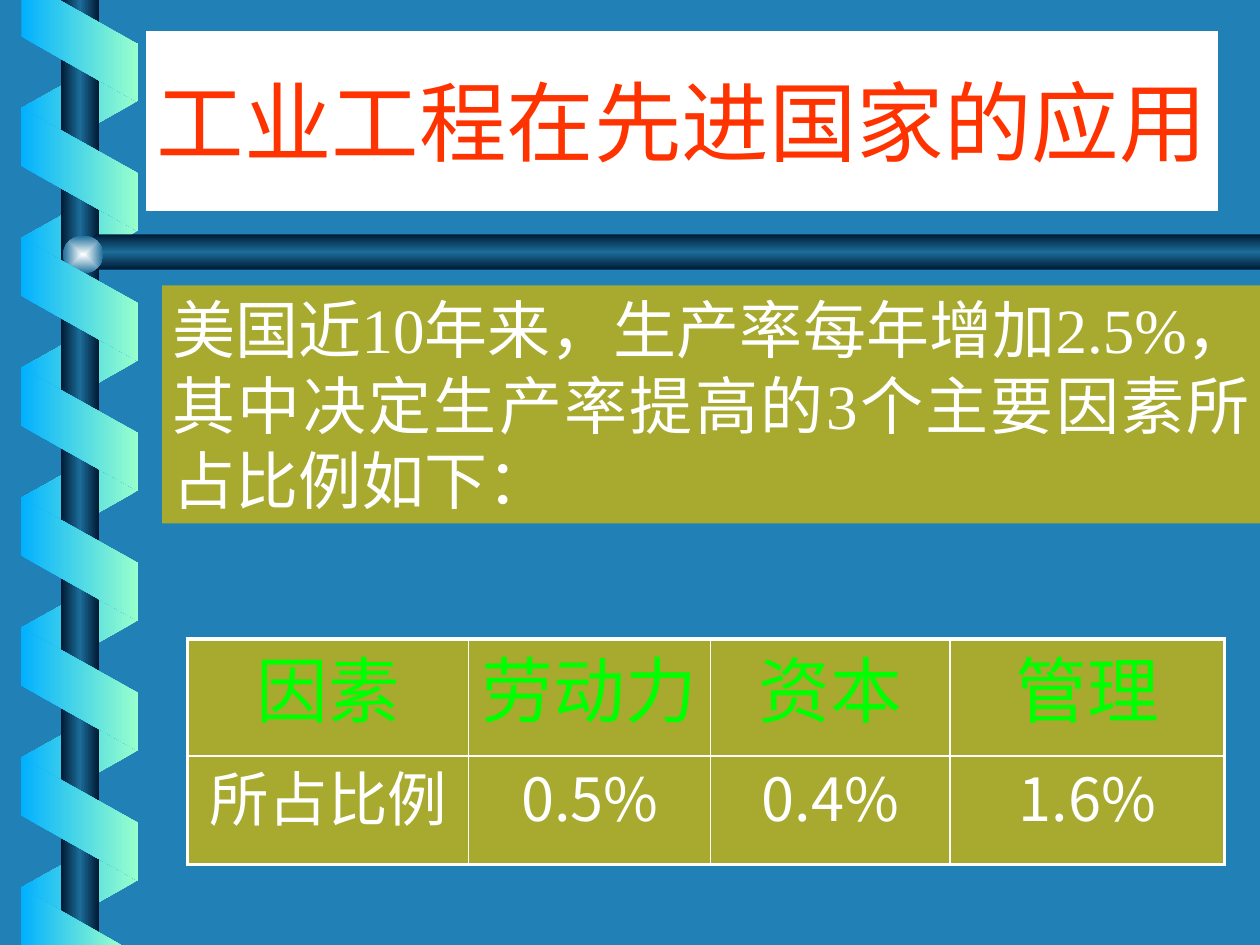
import dataclasses

import lxml.etree
import pptx
import pptx.dml.color
import pptx.enum.shapes
import pptx.enum.text
import pptx.oxml
import pptx.oxml.ns
import pptx.util

COLUMNS, ROWS = 100, 75
WIDTH, HEIGHT = pptx.util.Inches(10), pptx.util.Inches(7.5)
SHAPE = pptx.enum.shapes.MSO_SHAPE
ALIGN = pptx.enum.text.PP_ALIGN
ANCHOR = pptx.enum.text.MSO_ANCHOR


@dataclasses.dataclass(frozen=True)
class Theme:
    background: str = "2181B7"
    panel: str = "A7AA2E"
    white: str = "FFFFFF"
    title: str = "FF3300"
    heading: str = "00FF00"
    ribbon: tuple = ((0, "01B0FF"), (100, "99FFCC"))
    ribbon_back: tuple = ((0, "99FFCC"), (100, "01B0FF"))
    rod: tuple = ((0, "001932"), (50, "1C6D9A"), (100, "001932"))
    knob: tuple = ((0, "FEFFFF"), (100, "1C6D9A"))
    title_font: str = "Noto Sans CJK SC"
    body_font: str = "Times New Roman"
    value_font: str = "Noto Sans CJK JP"
    title_size: int = 50
    body_size: int = 36
    heading_size: int = 41
    value_size: int = 34
    table_spacing: float = 0.88
    outer_line: float = 2.25
    inner_line: float = 1


THEME = Theme()


def across(columns):
    return round(WIDTH * columns / COLUMNS)


def down(rows):
    return round(HEIGHT * rows / ROWS)


def area(left, top, width, height):
    return across(left), down(top), across(width), down(height)


def move(shape, box):
    shape.left, shape.top, shape.width, shape.height = area(*box)


def paint(target, color):
    target.fill.solid()
    target.fill.fore_color.rgb = pptx.dml.color.RGBColor.from_string(color)


def paint_gradient(shape, stops, angle=0, radial=False):
    shape.shadow.inherit = False
    shape.line.fill.background()
    shape.fill.gradient()
    gradient = shape._element.spPr.find(pptx.oxml.ns.qn("a:gradFill"))
    gradient.set("rotWithShape", "0")
    for child in list(gradient):
        gradient.remove(child)
    stop_list = lxml.etree.SubElement(gradient, pptx.oxml.ns.qn("a:gsLst"))
    for position, color in stops:
        stop = lxml.etree.SubElement(stop_list, pptx.oxml.ns.qn("a:gs"), pos=str(position * 1000))
        lxml.etree.SubElement(stop, pptx.oxml.ns.qn("a:srgbClr"), val=color)
    if radial:
        focus = lxml.etree.SubElement(gradient, pptx.oxml.ns.qn("a:path"), path="shape")
        edges = dict.fromkeys("ltrb", "50000")
        lxml.etree.SubElement(focus, pptx.oxml.ns.qn("a:fillToRect"), **edges)
    else:
        lxml.etree.SubElement(gradient, pptx.oxml.ns.qn("a:lin"), ang=str(angle * 60000), scaled="0")


def flip(shape):
    shape._element.spPr.xfrm.set("flipH", "1")


def add_gradient_shape(slide, kind, box, stops, adjustment=None, **options):
    shape = slide.shapes.add_shape(kind, *area(*box))
    if adjustment is not None:
        shape.adjustments[0] = adjustment
    paint_gradient(shape, stops, **options)
    return shape


def add_ribbons(slide, first_top, count, stops, rotation):
    for index in range(count):
        box = (1.4, first_top + 10.31 * index, 9.8, 9.3)
        ribbon = add_gradient_shape(slide, SHAPE.PARALLELOGRAM, box, stops, 0.56)
        ribbon.rotation = rotation
        if rotation == 90:
            flip(ribbon)


def add_ribbon_end(slide, points):
    start, *others = [(across(x), down(y)) for x, y in points]
    builder = slide.shapes.build_freeform(*start)
    builder.add_line_segments(others, close=True)
    paint_gradient(builder.convert_to_shape(), THEME.ribbon)


def add_spiral(slide):
    add_ribbons(slide, 3.65, 7, THEME.ribbon_back, 90)
    add_gradient_shape(slide, SHAPE.RECTANGLE, (4.85, 0, 3, 75), THEME.rod)
    bar = add_gradient_shape(slide, SHAPE.PENTAGON, (6, 18.6, 94, 2.8), THEME.rod, 0.59, angle=90)
    flip(bar)
    add_gradient_shape(slide, SHAPE.OVAL, (5, 18.7, 3.2, 3), THEME.knob, radial=True)
    add_ribbons(slide, 8.8, 6, THEME.ribbon, 270)
    add_ribbon_end(slide, [(1.7, 0), (1.7, 2.9), (10.9, 8.1), (10.9, 3.5), (4.7, 0)])
    add_ribbon_end(slide, [(9.6, 75), (1.7, 70.5), (1.7, 75)])


def set_insets(holder, horizontal=0.8, vertical=0.4):
    holder.margin_left = holder.margin_right = across(horizontal)
    holder.margin_top = holder.margin_bottom = down(vertical)


def write(paragraph, text, font, size, color, alignment):
    paragraph.alignment = alignment
    run = paragraph.add_run()
    run.text = text
    run.font.name = font
    run.font.size = pptx.util.Pt(size)
    run.font.color.rgb = pptx.dml.color.RGBColor.from_string(color)


def fill_title(slide, text):
    title = slide.shapes.title
    move(title, (11.65, 2.5, 85, 14.2))
    paint(title, THEME.white)
    title.line.color.rgb = pptx.dml.color.RGBColor.from_string(THEME.white)
    title.line.width = pptx.util.Pt(0.75)
    frame = title.text_frame
    frame.auto_size = pptx.enum.text.MSO_AUTO_SIZE.NONE
    frame.word_wrap = False
    frame.vertical_anchor = ANCHOR.MIDDLE
    set_insets(frame, horizontal=0)
    write(frame.paragraphs[0], text, THEME.title_font, THEME.title_size, THEME.title, ALIGN.CENTER)


def fill_body(slide, text):
    body = slide.placeholders[1]
    move(body, (12.87, 22.65, 87.13, 18.9))
    paint(body, THEME.panel)
    frame = body.text_frame
    frame.auto_size = pptx.enum.text.MSO_AUTO_SIZE.NONE
    frame.word_wrap = True
    set_insets(frame)
    paragraph = frame.paragraphs[0]
    properties = paragraph._p.get_or_add_pPr()
    properties.set("marL", "0")
    properties.set("indent", "0")
    lxml.etree.SubElement(properties, pptx.oxml.ns.qn("a:buNone"))
    paragraph.space_before = pptx.util.Pt(0)
    write(paragraph, text, THEME.body_font, THEME.body_size, THEME.white, ALIGN.JUSTIFY)


def add_border(cell, side, width):
    line = lxml.etree.SubElement(cell._tc.get_or_add_tcPr(), pptx.oxml.ns.qn("a:ln" + side))
    line.set("w", str(pptx.util.Pt(width)))
    fill = lxml.etree.SubElement(line, pptx.oxml.ns.qn("a:solidFill"))
    lxml.etree.SubElement(fill, pptx.oxml.ns.qn("a:srgbClr"), val=THEME.white)


def add_factor_table(slide, rows):
    widths, heights = (22.3, 19.2, 19, 21.8), (9.3, 8.6)
    box = area(14.9, 50.7, sum(widths), sum(heights))
    table = slide.shapes.add_table(len(heights), len(widths), *box).table
    for column, width in zip(table.columns, widths):
        column.width = across(width)
    styles = (
        (THEME.body_font, THEME.heading_size, THEME.heading),
        (THEME.value_font, THEME.value_size, THEME.white),
    )
    last_row, last_column = len(heights) - 1, len(widths) - 1
    for row, (texts, style) in enumerate(zip(rows, styles)):
        table.rows[row].height = down(heights[row])
        for column, text in enumerate(texts):
            cell = table.cell(row, column)
            set_insets(cell)
            outer = {"L": column == 0, "R": column == last_column, "T": row == 0, "B": row == last_row}
            for side, is_outer in outer.items():
                add_border(cell, side, THEME.outer_line if is_outer else THEME.inner_line)
            paint(cell, THEME.panel)
            paragraph = cell.text_frame.paragraphs[0]
            paragraph.line_spacing = THEME.table_spacing
            write(paragraph, text, *style, ALIGN.CENTER)


def main():
    presentation = pptx.Presentation()
    presentation.slide_width, presentation.slide_height = WIDTH, HEIGHT
    slide = presentation.slides.add_slide(presentation.slide_layouts[1])
    paint(slide.background, THEME.background)
    add_spiral(slide)
    fill_title(slide, "工业工程在先进国家的应用")
    fill_body(slide, "美国近10年来，生产率每年增加2.5%，其中决定生产率提高的3个主要因素所占比例如下：")
    add_factor_table(slide, (("因素", "劳动力", "资本", "管理"), ("所占比例", "0.5%", "0.4%", "1.6%")))
    presentation.save("out.pptx")


if __name__ == "__main__":
    main()
